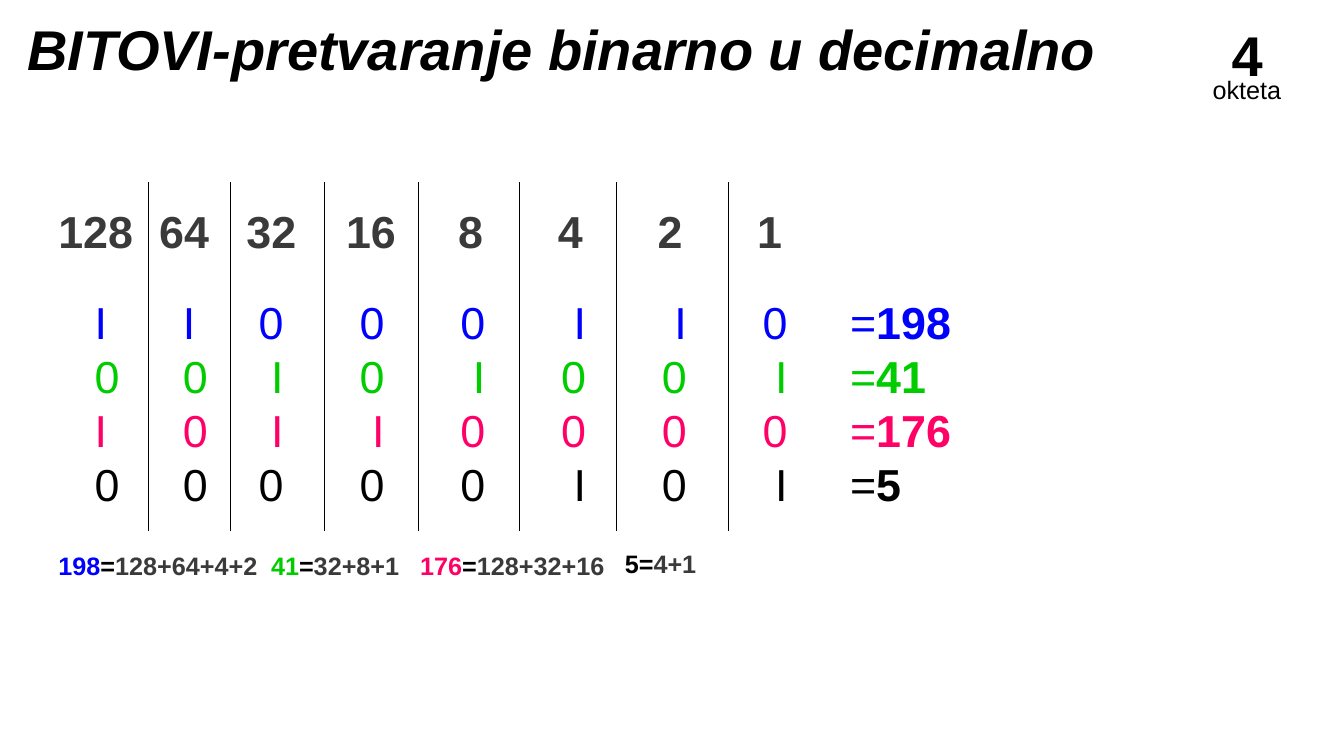
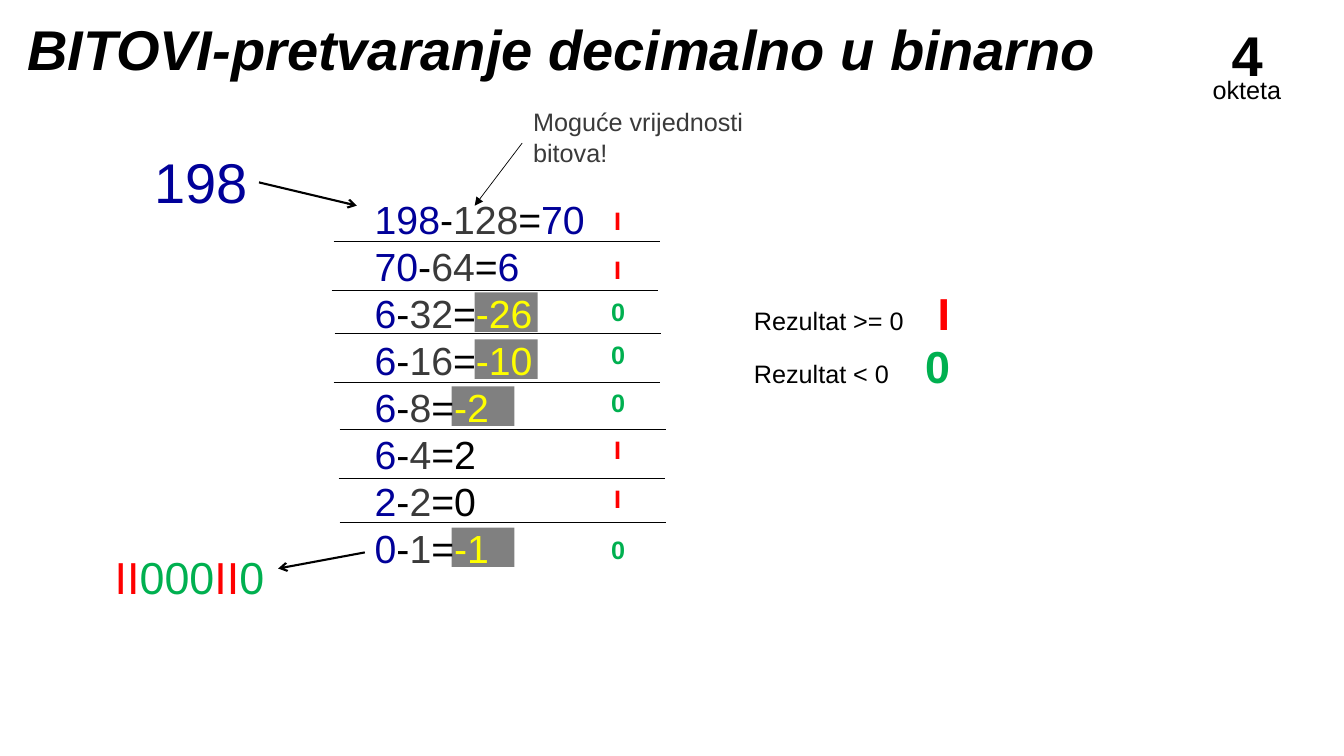
from itertools import groupby

from lxml import etree
from pptx import Presentation, util as u
from pptx.dml.color import RGBColor
from pptx.enum import shapes, text
from pptx.oxml import ns

COLORS = {
    "black": "000000", "gray": "3A3A3A", "box": "808080", "white": "FFFFFF",
    "blue": "0000FF", "lime": "00CC00", "pink": "FF0066",
    "navy": "000099", "yellow": "FFFF00", "red": "FF0000", "green": "00B050",
}
FONT = "Arial"
WEIGHTS = [2 ** power for power in range(7, -1, -1)]
SYMBOL_COLORS = {"I": "red", "0": "green"}


def rgb(name):
    """Return the named colour."""
    return RGBColor.from_string(COLORS[name])


def bits(value):
    """Return the eight bits of a value, with I for one."""
    return format(value, "08b").replace("1", "I")


def add_tabs(paragraph, tabs):
    """Set the tab stops, given as (position, alignment) pairs."""
    properties = paragraph._p.get_or_add_pPr()
    stops = etree.SubElement(properties, ns.qn("a:tabLst"))
    for position, alignment in tabs:
        etree.SubElement(stops, ns.qn("a:tab"), pos=str(int(u.Pt(position))), algn=alignment)


def add_text(container, at, lines, tabs=(), wrap=False, spacing=1.2, left_inset=7.2):
    """Add a text box whose lines are lists of (text, size, colour, style) runs."""
    box = container.add_textbox(*map(u.Pt, at))
    frame = box.text_frame
    frame.word_wrap = wrap
    frame.auto_size = text.MSO_AUTO_SIZE.NONE
    frame.margin_left = u.Pt(left_inset)
    for index, runs in enumerate(lines):
        paragraph = frame.add_paragraph() if index else frame.paragraphs[0]
        paragraph.line_spacing = u.Pt(round(spacing * max(run[1] for run in runs), 2))
        if tabs:
            add_tabs(paragraph, tabs)
        for content, size, color, style in runs:
            run = paragraph.add_run()
            run.text = content
            run.font.name = FONT
            run.font.size = u.Pt(size)
            run.font.bold = "b" in style
            run.font.italic = "i" in style
            run.font.color.rgb = rgb(color)
    return box


def add_line(slide, start, end, width=0.5, head=None):
    """Add a black straight line, with an arrowhead at its end if named."""
    line = slide.shapes.add_connector(
        shapes.MSO_CONNECTOR.STRAIGHT, *map(u.Pt, (*start, *end)))
    line.line.color.rgb = rgb("black")
    line.line.width = u.Pt(width)
    if head:
        etree.SubElement(line.line._get_or_add_ln(), ns.qn("a:tailEnd"), type=head)
    etree.SubElement(line._element.spPr, ns.qn("a:effectLst"))


def add_highlight(slide, left, top):
    """Add the gray box behind a negative result."""
    box = slide.shapes.add_shape(
        shapes.MSO_SHAPE.RECTANGLE, *map(u.Pt, (left, top, 44.9, 28.2)))
    box.shadow.inherit = False
    box.fill.solid()
    box.fill.fore_color.rgb = rgb("box")
    box.line.fill.background()


def add_slide(presentation, title):
    """Add a slide with its title and octet label."""
    slide = presentation.slides.add_slide(presentation.slide_layouts[6])
    slide.background.fill.solid()
    slide.background.fill.fore_color.rgb = rgb("white")
    add_text(slide.shapes, (19.4, 11.5, 935.3, 84.2), [[(title, 40, "black", "bi")]],
             wrap=True, spacing=1.08, left_inset=0)
    label = slide.shapes.add_group_shape()
    add_text(label.shapes, (872.6, 10.8, 36.7, 55.4), [[("4", 40, "black", "b")]])
    add_text(label.shapes, (859, 49.7, 64.1, 28.8), [[("okteta", 18, "black", "")]])
    return slide


def build_binary_to_decimal(presentation):
    """Build the slide that reads four octets as numbers."""
    slide = add_slide(presentation, "BITOVI-pretvaranje binarno u decimalno")
    octets = [(198, "blue"), (41, "lime"), (176, "pink"), (5, "black")]
    bit_tabs = [(63.1, "l"), *((135.1 + 72 * step, "r") for step in range(6)), (539.6, "l")]
    rows = [[("\t".join(bits(value)) + "\t=", 32, color, ""), (str(value), 32, color, "b")]
            for value, color in octets]
    add_text(slide.shapes, (60.5, 207.1, 632, 160.8), rows, bit_tabs, wrap=True)

    weight_tabs = [(stop, "l") for stop in (72, 134.3, 205.5, 285.6, 356.8, 428, 499.2)]
    header = "\t".join(map(str, WEIGHTS))
    add_text(slide.shapes, (34.6, 141.8, 535.7, 46.1), [[(header, 32, "gray", "b")]],
             weight_tabs, wrap=True)

    places = [(34.6, 389.5, 157.7), (186.5, 389.5, 106.6), (293, 389.5, 147.6), (439.2, 388.1, 66.2)]
    for (value, color), (left, top, width) in zip(octets, places):
        parts = "+".join(str(weight) for weight in WEIGHTS if value & weight)
        add_text(slide.shapes, (left, top, width, 28.8),
                 [[(str(value), 18, color, "b"), ("=", 18, "black", "b"), (parts, 18, "gray", "b")]])

    for x in (105.8, 164.9, 231.8, 298.8, 370.8, 440.6, 520.6):
        add_line(slide, (x, 130.3), (x, 379.4))


def add_subtractions(slide, value):
    """Add the subtraction of each weight, with negative results highlighted."""
    remainder, lines = value, []
    for row, weight in enumerate(WEIGHTS):
        result = remainder - weight
        color = "yellow" if result < 0 else "navy" if weight >= 64 else "black"
        if result < 0:
            add_highlight(slide, 322.6 + 16.5 * (len(str(weight)) - 1), 141.6 + 33.6 * row)
        lines.append([(str(remainder), 28, "navy", ""), ("-", 28, "black", ""),
                      (str(weight), 28, "gray", ""), ("=", 28, "black", ""),
                      (str(result), 28, color, "")])
        if result >= 0:
            remainder = result
    add_text(slide.shapes, (260.6, 136.1, 232.6, 278.6), lines)


def build_decimal_to_binary(presentation):
    """Build the slide that turns a number into its bits."""
    slide = add_slide(presentation, "BITOVI-pretvaranje decimalno u binarno")
    value = 198
    add_subtractions(slide, value)
    add_text(slide.shapes, (103, 102.2, 82.1, 55.4), [[(str(value), 40, "navy", "")]])
    answer = [("".join(group), 32, SYMBOL_COLORS[symbol], "")
              for symbol, group in groupby(bits(value))]
    add_text(slide.shapes, (74.9, 388.8, 163.4, 89.3), [answer], wrap=True)

    rules = [("Rezultat >= 0", "I"), ("Rezultat < 0", "0")]
    add_text(slide.shapes, (531.4, 200.2, 157, 113.8),
             [[(rule + "\t", 18, "black", ""), (symbol, 32, SYMBOL_COLORS[symbol], "b")]
              for rule, symbol in rules], [(140.2, "r")], wrap=True)
    add_text(slide.shapes, (373.7, 72.7, 212.4, 28.8),
             [[("Moguće vrijednosti bitova!", 18, "gray", "")]], wrap=True)

    add_line(slide, (185, 130.3), (254.9, 146.9), 1.5, "arrow")
    add_line(slide, (260.6, 394.6), (198.7, 406.1), 1.5, "arrow")
    add_line(slide, (373, 102.2), (339.1, 146.9), head="triangle")

    marker_tops = (143.3, 177.8, 208.1, 239, 272.9, 306.7, 342, 378)
    for symbol, top in zip(bits(value), marker_tops):
        left, width = (431.6, 19.4) if symbol == "I" else (429.5, 24.5)
        add_text(slide.shapes, (left, top, width, 28.8),
                 [[(symbol, 18, SYMBOL_COLORS[symbol], "b")]])

    rulings = [(238.3, 172.1), (236.9, 207.4), (239, 238.3), (238.3, 272.9),
               (242.6, 306.7), (241.9, 342), (242.6, 373)]
    for left, y in rulings:
        add_line(slide, (left, y), (left + 232.9, y))


def main():
    """Build and save the presentation."""
    presentation = Presentation()
    presentation.slide_width = u.Pt(960)
    presentation.slide_height = u.Pt(540)
    build_binary_to_decimal(presentation)
    build_decimal_to_binary(presentation)
    presentation.save("out.pptx")


if __name__ == "__main__":
    main()
